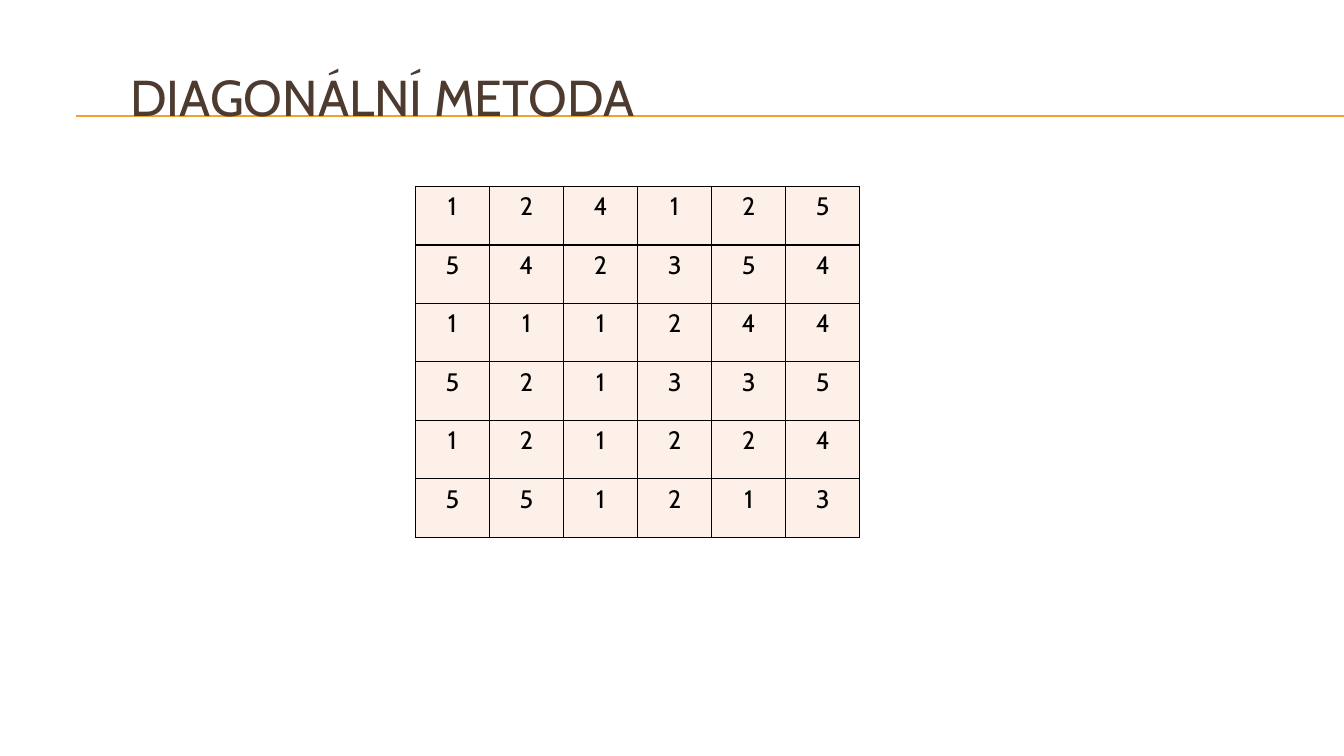
from dataclasses import dataclass

from lxml import etree
from pptx import Presentation
from pptx.dml.color import RGBColor
from pptx.enum.shapes import MSO_CONNECTOR
from pptx.enum.text import MSO_ANCHOR, PP_ALIGN
from pptx.oxml.ns import qn
from pptx.util import Inches, Pt

STRAIGHT = MSO_CONNECTOR.STRAIGHT
MIDDLE = MSO_ANCHOR.MIDDLE
CENTER = PP_ALIGN.CENTER


@dataclass(frozen=True)
class Theme:
    font: str = "Cabin"
    title: str = "4E3B30"
    rule: str = "F0A22E"
    ink: str = "000000"
    cell: str = "FCF0E8"
    title_size: float = 36
    cell_size: float = 18
    rule_width: float = 0.75
    edge_width: float = 1


THEME = Theme()
WIDTH, HEIGHT = 13.33, 7.5
COSTS = [
    [1, 2, 4, 1, 2, 5],
    [5, 4, 2, 3, 5, 4],
    [1, 1, 1, 2, 4, 4],
    [5, 2, 1, 3, 3, 5],
    [1, 2, 1, 2, 2, 4],
    [5, 5, 1, 2, 1, 3],
]


def style(part, size, color):
    for run in part.runs:
        run.font.name = THEME.font
        run.font.size = Pt(size)
        run.font.color.rgb = RGBColor.from_string(color)


def add_rules(slide, left, top, width, gap):
    for y in (top, top + gap):
        rule = slide.shapes.add_connector(
            STRAIGHT, Inches(left), Inches(y), Inches(left + width), Inches(y)
        )
        rule.line.color.rgb = RGBColor.from_string(THEME.rule)
        rule.line.width = Pt(THEME.rule_width)
        etree.SubElement(rule._element.spPr, qn("a:effectLst"))


def add_title(slide, text, left, top, width, height):
    box = slide.shapes.add_textbox(
        Inches(left), Inches(top), Inches(width), Inches(height)
    )
    frame = box.text_frame
    frame.word_wrap = True
    frame.vertical_anchor = MIDDLE
    frame.margin_left = Inches(0.85)
    frame.text = text
    style(frame.paragraphs[0], THEME.title_size, THEME.title)


def add_edges(cell):
    props = cell._tc.get_or_add_tcPr()
    for side in ("a:lnL", "a:lnR", "a:lnT", "a:lnB"):
        edge = etree.SubElement(props, qn(side), w=str(Pt(THEME.edge_width)))
        fill = etree.SubElement(edge, qn("a:solidFill"))
        etree.SubElement(fill, qn("a:srgbClr"), val=THEME.ink)


def add_grid(slide, data, left, top, width, height):
    table = slide.shapes.add_table(
        len(data), len(data[0]),
        Inches(left), Inches(top), Inches(width), Inches(height),
    ).table
    table.first_row = False
    table.horz_banding = False
    for r, row in enumerate(data):
        for c, value in enumerate(row):
            cell = table.cell(r, c)
            add_edges(cell)
            cell.fill.solid()
            cell.fill.fore_color.rgb = RGBColor.from_string(THEME.cell)
            cell.text_frame.text = str(value)
            para = cell.text_frame.paragraphs[0]
            para.alignment = CENTER
            style(para, THEME.cell_size, THEME.ink)


def main():
    deck = Presentation()
    deck.slide_width = Inches(WIDTH)
    deck.slide_height = Inches(HEIGHT)
    slide = deck.slides.add_slide(deck.slide_layouts[6])
    add_rules(slide, 0.75, 1.15, WIDTH - 0.75, 0.01)
    add_title(slide, "DIAGONÁLNÍ METODA", 0.44, 0.5, 12.67, 0.92)
    add_grid(slide, COSTS, 4.12, 1.85, 4.41, 3.48)
    deck.save("out.pptx")


if __name__ == "__main__":
    main()
